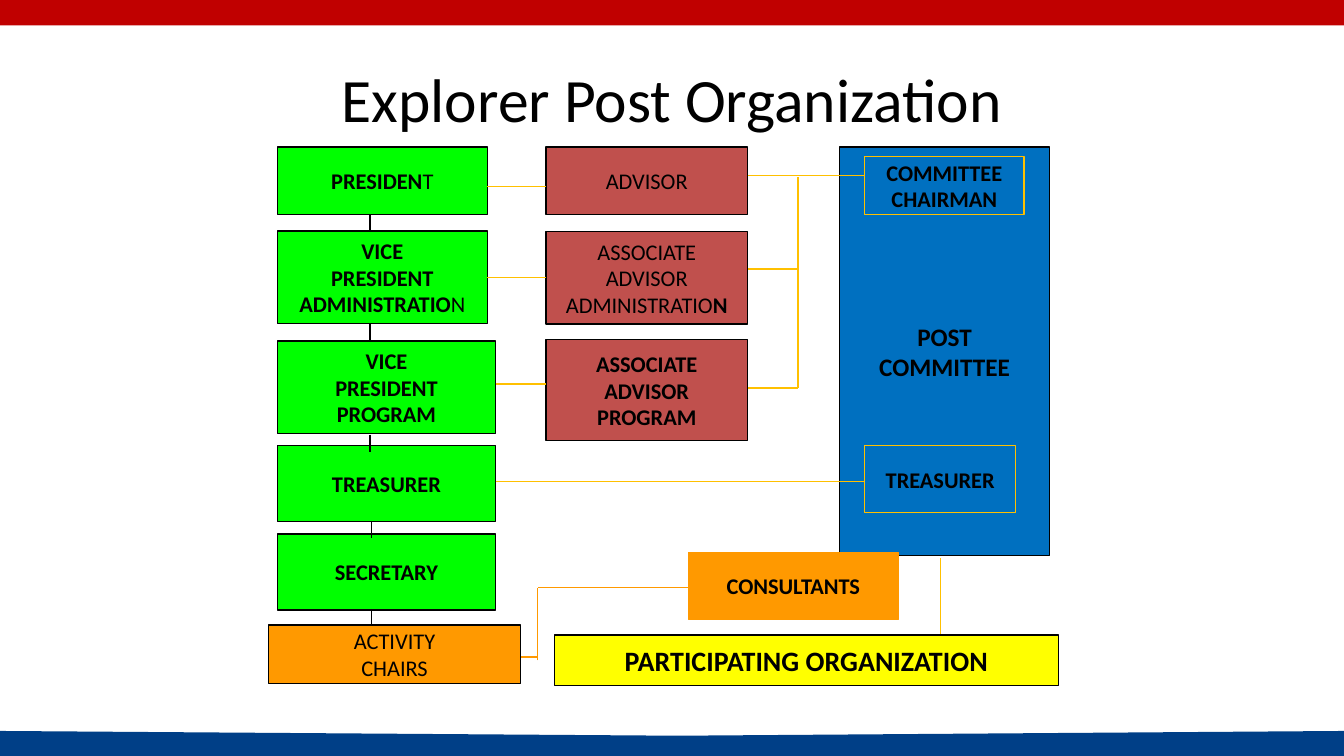
from pptx import Presentation
from pptx.util import Cm, Pt
from pptx.dml.color import RGBColor
from pptx.enum.shapes import MSO_SHAPE, MSO_CONNECTOR
from pptx.enum.text import PP_ALIGN, MSO_ANCHOR
from pptx.oxml.ns import qn
from lxml.etree import SubElement


def color(code):
    return RGBColor.from_string(code)


def write(shape, text, size=16, bold=True, wrap=False):
    """Each line is a paragraph; a bar switches bold on or off."""
    frame = shape.text_frame
    frame.word_wrap = wrap
    frame.vertical_anchor = MSO_ANCHOR.MIDDLE
    for i, line in enumerate(text.split("\n")):
        para = frame.paragraphs[0] if i == 0 else frame.add_paragraph()
        para.alignment = PP_ALIGN.CENTER
        for j, part in enumerate(line.split("|")):
            run = para.add_run()
            run.text = part
            run.font.name = "Calibri"
            run.font.size = Pt(size)
            run.font.bold = bold != (j % 2 == 1)
            run.font.color.rgb = color("000000")


deck = Presentation()
deck.slide_width, deck.slide_height = Cm(33.87), Cm(19.05)
slide = deck.slides.add_slide(deck.slide_layouts[6])
shapes = slide.shapes

BLACK, GOLD, ORANGE = "000000", "FFC000", "FF9900"
GREEN, RED, BLUE, YELLOW = "00FF00", "C0504D", "0070C0", "FFFF00"

# Top band and bottom wedge
band = shapes.add_shape(MSO_SHAPE.RECTANGLE, 0, 0, Cm(33.87), Cm(0.64))
pen = shapes.build_freeform(0, Cm(18.42))
pen.add_line_segments([(Cm(17.07), Cm(18.54)), (Cm(33.87), Cm(18.42)),
                       (Cm(33.87), Cm(19.05)), (0, Cm(19.05))], close=True)
wedge = pen.convert_to_shape()
for shape, fill in ((band, "C00000"), (wedge, "003F87")):
    shape.shadow.inherit = False
    shape.fill.solid()
    shape.fill.fore_color.rgb = color(fill)
    shape.line.fill.background()

# Title
title = shapes.add_textbox(Cm(5.51), Cm(1.24), Cm(22.86), Cm(2.46))
write(title, "Explorer Post Organization", size=44, bold=False, wrap=True)

# Boxes: left, top, width, height, fill, edge, text, format
boxes = [
    # Committee
    (21.16, 3.71, 5.29, 10.29, BLUE, BLACK, "POST\nCOMMITTEE", {"size": 18}),
    (21.79, 3.94, 4.02, 1.47, BLUE, GOLD, "COMMITTEE\nCHAIRMAN", {}),
    (21.79, 11.23, 3.81, 1.69, BLUE, GOLD, "TREASURER", {}),
    # Advisors
    (13.76, 3.71, 5.08, 1.69, RED, BLACK, "ADVISOR", {"bold": False}),
    (13.76, 5.84, 5.08, 2.33, RED, BLACK,
     "ASSOCIATE\nADVISOR\nADMINISTRATIO|N", {"bold": False}),
    (13.76, 8.56, 5.08, 2.54, RED, BLACK, "ASSOCIATE\nADVISOR\nPROGRAM", {}),
    # Officers
    (6.99, 3.71, 5.29, 1.69, GREEN, BLACK, "PRESIDEN|T", {}),
    (6.99, 5.82, 5.29, 2.33, GREEN, BLACK,
     "VICE\nPRESIDENT\nADMINISTRATIO|N", {}),
    (6.99, 8.59, 5.5, 2.33, GREEN, BLACK, "VICE\nPRESIDENT\nPROGRAM", {}),
    (6.99, 11.23, 5.5, 1.91, GREEN, BLACK, "TREASURER", {}),
    (6.99, 13.46, 5.5, 1.91, GREEN, BLACK, "SECRETARY", {}),
    # Support
    (6.77, 15.75, 6.35, 1.48, ORANGE, BLACK, "ACTIVITY\nCHAIRS",
     {"bold": False}),
    (17.35, 13.92, 5.29, 1.69, ORANGE, ORANGE, "CONSULTANTS", {}),
    (13.97, 16, 12.7, 1.27, YELLOW, BLACK, "PARTICIPATING ORGANIZATION",
     {"size": 20}),
]
for left, top, width, height, fill, edge, text, style in boxes:
    box = shapes.add_shape(MSO_SHAPE.RECTANGLE, Cm(left), Cm(top),
                           Cm(width), Cm(height))
    box.shadow.inherit = False
    box.fill.solid()
    box.fill.fore_color.rgb = color(fill)
    box.line.color.rgb = color(edge)
    box.line.width = Pt(1)
    write(box, text, **style)

# Links: start x, start y, end x, end y, grouped by color
links = {
    GOLD: [
        (12.28, 4.7, 13.76, 4.7), (12.28, 6.99, 13.76, 6.99),
        (12.49, 9.68, 13.76, 9.68), (12.49, 12.14, 21.79, 12.14),
        (18.84, 4.42, 21.79, 4.42), (20.11, 4.47, 20.11, 9.78),
        (20.11, 9.78, 18.84, 9.78), (20.11, 6.78, 18.84, 6.78),
        (23.7, 14.07, 23.7, 15.98),
    ],
    BLACK: [
        (9.32, 5.41, 9.32, 5.82), (9.32, 8.15, 9.32, 8.56),
        (9.32, 10.95, 9.32, 11.38), (9.37, 13.13, 9.37, 13.56),
        (9.37, 15.34, 9.37, 15.75),
    ],
    ORANGE: [
        (13.13, 16.56, 13.55, 16.56), (13.55, 16.64, 13.55, 14.81),
        (13.55, 14.81, 17.35, 14.81),
    ],
}
for edge, group in links.items():
    for ends in group:
        link = shapes.add_connector(MSO_CONNECTOR.STRAIGHT,
                                    *[Cm(end) for end in ends])
        link.line.color.rgb = color(edge)
        link.line.width = Pt(1)
        SubElement(link._element.spPr, qn("a:effectLst"))

deck.save("out.pptx")
